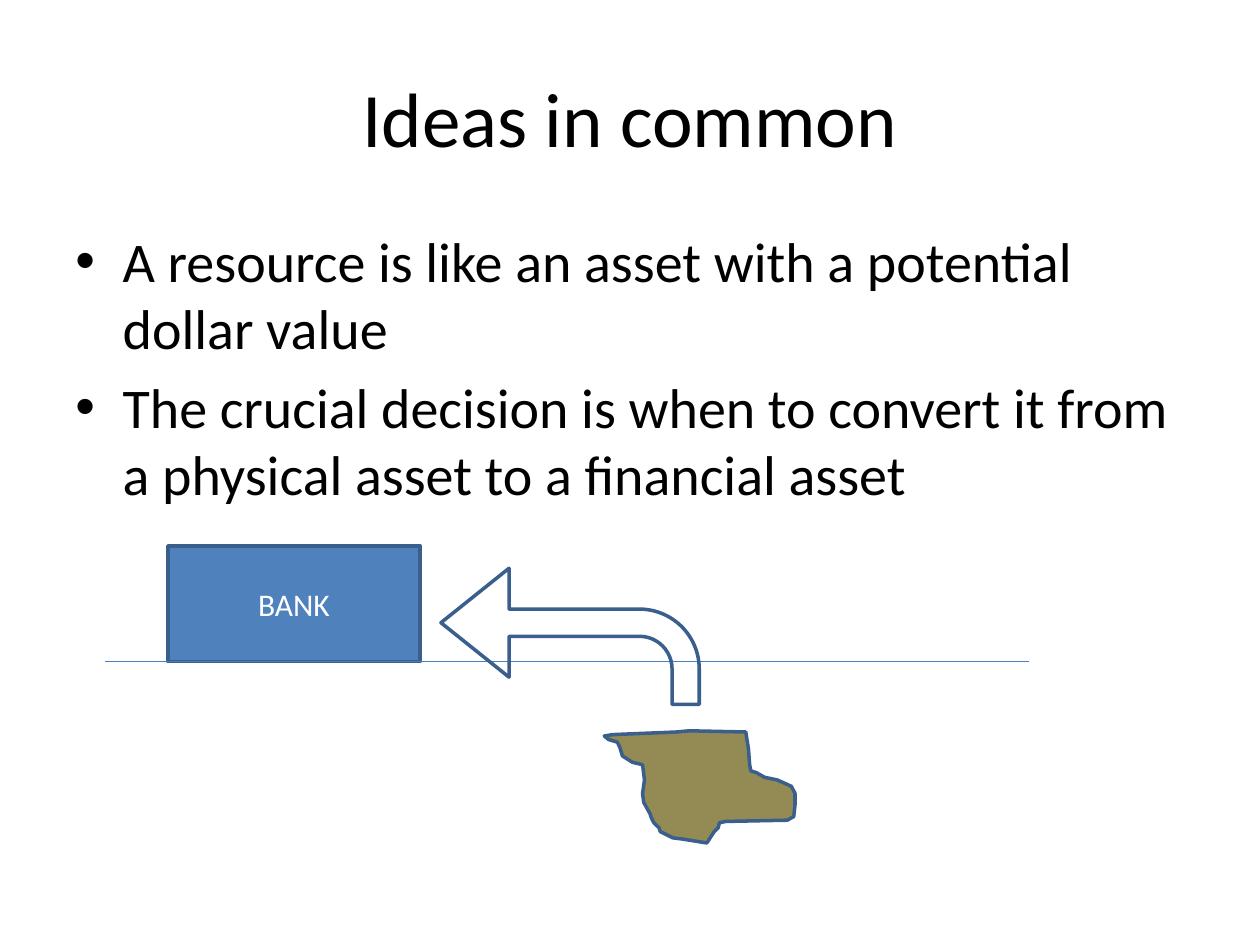
"""Build the slide on turning a physical asset into a financial one."""
from pptx import Presentation
from pptx.dml.color import RGBColor
from pptx.enum.shapes import MSO_CONNECTOR as Connector, MSO_SHAPE as Shape
from pptx.enum.text import MSO_ANCHOR as Anchor, PP_ALIGN as Align
from pptx.oxml.ns import qn
from pptx.util import Pt
from lxml.etree import SubElement

COLORS = {
    "text": "000000", "light": "FFFFFF", "bank": "4F81BD",
    "outline": "3A5F8C", "ground": "4B7EBC", "deposit": "948A54",
}
IDEAS = [
    "A resource is like an asset with a potential dollar value",
    "The crucial decision is when to convert it from a physical asset to a financial asset",
]
DEPOSIT = [
    (350, 419.8), (386.6, 418.3), (393.8, 417.6), (426.2, 418.3), (427, 423.4),
    (427.7, 427.7), (428.4, 437), (429.1, 440.6), (432, 441.4), (437, 444.2),
    (444.2, 445.7), (452.2, 449.3), (454.3, 453.3), (454.3, 460.1), (453.6, 466.6),
    (450, 468.7), (414.7, 469.4), (411.1, 470.2), (410.4, 473), (408.2, 475.2),
    (403.9, 481.7), (390.2, 479.5), (384.5, 478.8), (377.3, 475.2), (376.6, 473),
    (373.7, 470.2), (372.2, 467.3), (371.5, 465.1), (367.9, 458.6), (367.2, 453.6),
    (368.3, 445.7), (367.2, 437), (361.4, 435.6), (355.7, 432), (354.2, 427),
    (352.8, 424.1), (347.8, 422.6), (345.3, 420.6),
]


class SlideBuilder:
    """Hold the style and the current slide, and draw each kind of element."""

    font = "Calibri"
    line_width = 2

    def __init__(self, slide):
        self.slide = slide
        self.shapes = slide.shapes

    def color(self, name):
        return RGBColor.from_string(COLORS[name])

    def add_text(self, para, text, size, color="text", align=Align.LEFT):
        para.alignment = align
        span = para.add_run()
        span.text = text
        span.font.name = self.font
        span.font.size = Pt(size)
        span.font.color.rgb = self.color(color)

    def paint(self, shape, fill=None):
        shape.shadow.inherit = False
        if fill:
            shape.fill.solid()
            shape.fill.fore_color.rgb = self.color(fill)
        else:
            shape.fill.background()
        shape.line.color.rgb = self.color("outline")
        shape.line.width = Pt(self.line_width)

    def title(self, text, left, top, width, height):
        box = self.shapes.title
        box.left, box.top, box.width, box.height = map(Pt, (left, top, width, height))
        box.text_frame.vertical_anchor = Anchor.MIDDLE
        self.add_text(box.text_frame.paragraphs[0], text, 44, align=Align.CENTER)

    def bullets(self, items, left, top, width, height, size=32, indent=27):
        frame = self.shapes.add_textbox(*map(Pt, (left, top, width, height))).text_frame
        frame.word_wrap = True
        for index, item in enumerate(items):
            para = frame.add_paragraph() if index else frame.paragraphs[0]
            para.space_before = Pt(size * 0.2)
            self.add_text(para, item, size)
            props = para._p.get_or_add_pPr()
            props.set("marL", str(Pt(indent)))
            props.set("indent", str(-Pt(indent)))
            SubElement(props, qn("a:buFont"), typeface="Arial")
            SubElement(props, qn("a:buChar"), char="•")

    def block(self, text, left, top, width, height, fill):
        box = self.shapes.add_shape(Shape.RECTANGLE, *map(Pt, (left, top, width, height)))
        self.paint(box, fill)
        box.text_frame.vertical_anchor = Anchor.MIDDLE
        self.add_text(box.text_frame.paragraphs[0], text, 18, "light", Align.CENTER)

    def rule(self, left, right, height):
        line = self.shapes.add_connector(
            Connector.STRAIGHT, Pt(left), Pt(height), Pt(right), Pt(height))
        line.line.color.rgb = self.color("ground")
        line.line.width = Pt(0.75)
        SubElement(line._element.spPr, qn("a:effectLst"))

    def outline(self, points, fill):
        start, *rest = [(Pt(x), Pt(y)) for x, y in points]
        builder = self.shapes.build_freeform(*start)
        builder.add_line_segments(rest, close=True)
        self.paint(builder.convert_to_shape(), fill)

    def left_bent_arrow(self, left, top, width, height, adjustments):
        arrow = self.shapes.add_shape(Shape.BENT_ARROW, *map(Pt, (left, top, width, height)))
        for index, value in enumerate(adjustments):
            arrow.adjustments[index] = value
        arrow._element.spPr.find(qn("a:xfrm")).set("flipH", "1")
        self.paint(arrow)


def main():
    deck = Presentation()
    deck.slide_width, deck.slide_height = Pt(720), Pt(540)
    page = SlideBuilder(deck.slides.add_slide(deck.slide_layouts[5]))
    ground = 378
    page.title("Ideas in common", 36, 21.6, 648, 90)
    page.bullets(IDEAS, 36, 126, 648, 356.4)
    page.block("BANK", 96, ground - 66, 144, 66, "bank")
    page.rule(60, 588, ground)
    page.outline(DEPOSIT, "deposit")
    page.left_bent_arrow(252, 324.7, 147.6, 77.8, (0.2, 0.4, 0.5, 0.44))
    deck.save("out.pptx")


if __name__ == "__main__":
    main()
